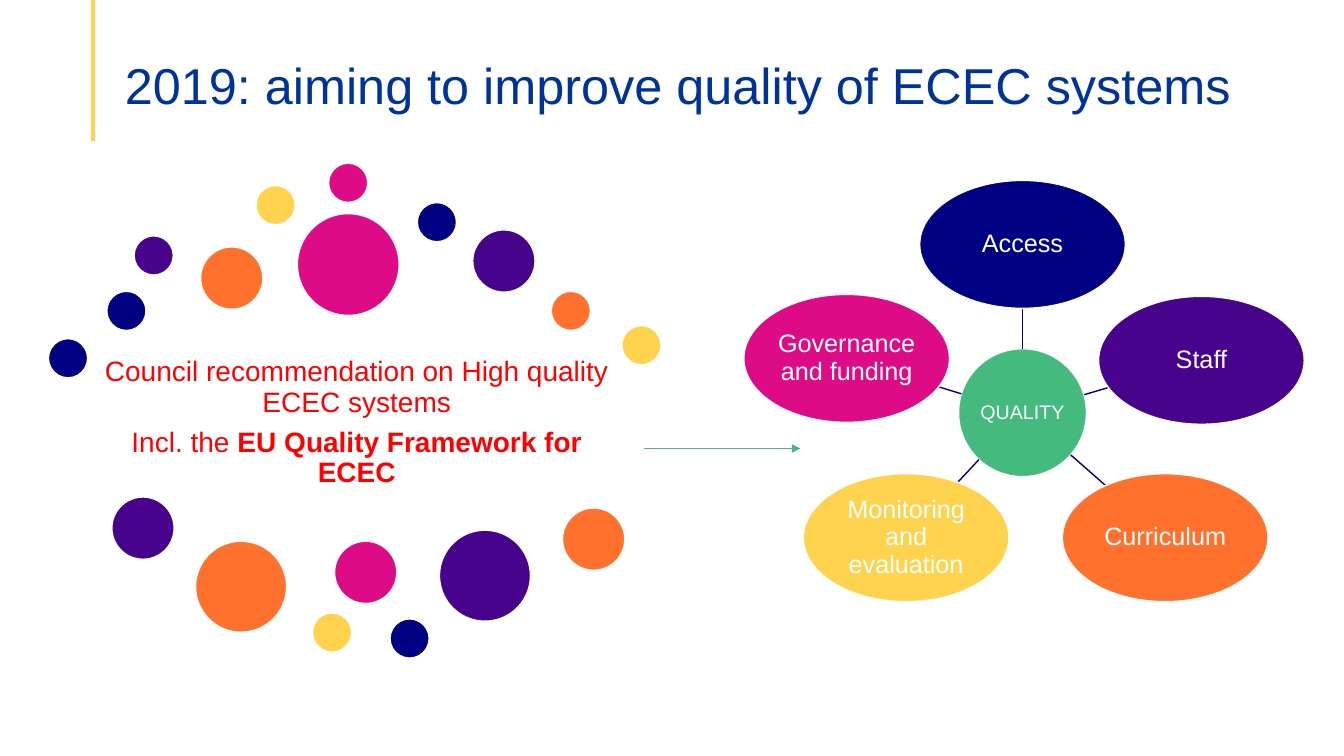
from dataclasses import dataclass
from math import hypot

from lxml import etree
from pptx import Presentation
from pptx.dml.color import RGBColor
from pptx.enum.shapes import MSO_CONNECTOR, MSO_SHAPE
from pptx.enum.text import MSO_ANCHOR, PP_ALIGN
from pptx.oxml.ns import qn
from pptx.shapes.autoshape import Shape
from pptx.shapes.connector import Connector
from pptx.slide import Slide
from pptx.text.text import TextFrame
from pptx.util import Pt

OVAL = MSO_SHAPE.OVAL
STRAIGHT = MSO_CONNECTOR.STRAIGHT
CENTER = PP_ALIGN.CENTER
LEFT = PP_ALIGN.LEFT
MIDDLE = MSO_ANCHOR.MIDDLE
BOTTOM = MSO_ANCHOR.BOTTOM


@dataclass(frozen=True)
class Theme:
    font: str = "Arial"
    white: str = "FFFFFF"
    title: str = "003399"
    message: str = "FF0000"
    navy: str = "000083"
    purple: str = "48038C"
    orange: str = "FF712C"
    yellow: str = "FFD34E"
    pink: str = "DD0C86"
    green: str = "44BA7E"
    title_size: float = 36
    message_size: float = 20
    topic_size: float = 18
    hub_size: float = 14
    line_spacing: float = 0.9
    paragraph_gap: float = 7


@dataclass(frozen=True)
class Phrase:
    text: str
    bold: bool = False


@dataclass(frozen=True)
class Style:
    size: float
    color: str
    align: PP_ALIGN = CENTER
    anchor: MSO_ANCHOR = MIDDLE
    insets: tuple[float, float, float, float] = (0.7, 0.7, 0.7, 0.7)


@dataclass(frozen=True)
class Dot:
    left: float
    top: float
    diameter: float
    color: str


@dataclass(frozen=True)
class Bubble:
    label: str
    x: float
    y: float
    width: float
    color: str
    size: float


THEME = Theme()
SMALL, MEDIUM, LARGE, LARGEST = 28, 44.5, 65, 72.7
BUBBLE_HEIGHT = 91.4
TOPIC_WIDTH = 146.9

DOTS = [
    Dot(76.3, 208.1, SMALL, THEME.navy),
    Dot(95.8, 168.5, SMALL, THEME.purple),
    Dot(143.3, 176.4, MEDIUM, THEME.orange),
    Dot(182.9, 132.5, SMALL, THEME.yellow),
    Dot(234.7, 116.6, SMALL, THEME.pink),
    Dot(298.1, 144.7, SMALL, THEME.navy),
    Dot(337.7, 164.2, MEDIUM, THEME.purple),
    Dot(393.8, 208.1, SMALL, THEME.orange),
    Dot(444.2, 232.6, SMALL, THEME.yellow),
    Dot(212.4, 152.6, LARGEST, THEME.pink),
    Dot(34.6, 241.9, SMALL, THEME.navy),
    Dot(79.9, 355, MEDIUM, THEME.purple),
    Dot(139.7, 386.6, LARGE, THEME.orange),
    Dot(223.2, 437.8, SMALL, THEME.yellow),
    Dot(239, 386.6, MEDIUM, THEME.pink),
    Dot(278.6, 442.1, SMALL, THEME.navy),
    Dot(313.9, 378.7, LARGE, THEME.purple),
    Dot(401.8, 362.9, MEDIUM, THEME.orange),
]

HUB = Bubble("QUALITY", 730.4, 294.8, BUBBLE_HEIGHT, THEME.green, THEME.hub_size)
TOPICS = [
    Bubble(label, x, y, TOPIC_WIDTH, color, THEME.topic_size)
    for label, x, y, color in [
        ("Access", 730.4, 174.6, THEME.navy),
        ("Staff", 858.2, 257.4, THEME.purple),
        ("Curriculum", 832.3, 384.1, THEME.orange),
        ("Monitoring and evaluation", 647.3, 384.1, THEME.yellow),
        ("Governance and funding", 604.8, 256, THEME.pink),
    ]
]

TITLE = [[Phrase("2019: aiming to improve quality of ECEC systems")]]
MESSAGE = [
    [Phrase("Council recommendation on High quality ECEC systems")],
    [Phrase("Incl. the "), Phrase("EU Quality Framework for ECEC", True)],
]


def write(frame: TextFrame, paragraphs: list[list[Phrase]], style: Style) -> None:
    frame.word_wrap = True
    frame.vertical_anchor = style.anchor
    (frame.margin_left, frame.margin_top,
     frame.margin_right, frame.margin_bottom) = map(Pt, style.insets)
    for index, phrases in enumerate(paragraphs):
        paragraph = frame.add_paragraph() if index else frame.paragraphs[0]
        paragraph.alignment = style.align
        paragraph.line_spacing = THEME.line_spacing
        if index < len(paragraphs) - 1:
            paragraph.space_after = Pt(THEME.paragraph_gap)
        for phrase in phrases:
            run = paragraph.add_run()
            run.text = phrase.text
            run.font.name = THEME.font
            run.font.size = Pt(style.size)
            run.font.bold = phrase.bold
            run.font.color.rgb = RGBColor.from_string(style.color)


def add_text(slide: Slide, box: tuple[float, float, float, float],
             paragraphs: list[list[Phrase]], style: Style) -> None:
    write(slide.shapes.add_textbox(*map(Pt, box)).text_frame, paragraphs, style)


def add_oval(slide: Slide, left: float, top: float, width: float,
             height: float, color: str) -> Shape:
    oval = slide.shapes.add_shape(OVAL, Pt(left), Pt(top), Pt(width), Pt(height))
    oval.shadow.inherit = False
    oval.fill.solid()
    oval.fill.fore_color.rgb = RGBColor.from_string(color)
    oval.line.color.rgb = RGBColor.from_string(THEME.white)
    oval.line.width = Pt(1)
    return oval


def add_line(slide: Slide, start: tuple[float, float], end: tuple[float, float],
             color: str, width: float) -> Connector:
    line = slide.shapes.add_connector(STRAIGHT, *map(Pt, (*start, *end)))
    line.line.color.rgb = RGBColor.from_string(color)
    line.line.width = Pt(width)
    etree.SubElement(line._element.spPr, qn("a:effectLst"))
    return line


def add_bubble(slide: Slide, bubble: Bubble) -> None:
    oval = add_oval(slide, bubble.x - bubble.width / 2, bubble.y - BUBBLE_HEIGHT / 2,
                    bubble.width, BUBBLE_HEIGHT, bubble.color)
    write(oval.text_frame, [[Phrase(bubble.label)]], Style(bubble.size, THEME.white))


def edge_toward(bubble: Bubble, target: Bubble) -> tuple[float, float]:
    dx, dy = target.x - bubble.x, target.y - bubble.y
    reach = hypot(dx / (bubble.width / 2), dy / (BUBBLE_HEIGHT / 2))
    return bubble.x + dx / reach, bubble.y + dy / reach


def main() -> None:
    deck = Presentation()
    deck.slide_width, deck.slide_height = Pt(960), Pt(540)
    slide = deck.slides.add_slide(deck.slide_layouts[6])

    add_line(slide, (66.4, 0), (66.4, 100.8), THEME.yellow, 2.25)
    add_text(slide, (82.1, 27.4, 877.7, 54.7), TITLE,
             Style(THEME.title_size, THEME.title, LEFT, BOTTOM, (7.2, 3.6, 7.2, 0)))
    add_text(slide, (66.2, 243.4, 377.3, 117.4), MESSAGE,
             Style(THEME.message_size, THEME.message, insets=(2, 2, 2, 2)))

    for dot in DOTS:
        add_oval(slide, dot.left, dot.top, dot.diameter, dot.diameter, dot.color)

    add_bubble(slide, HUB)
    for topic in TOPICS:
        add_line(slide, edge_toward(HUB, topic), edge_toward(topic, HUB), THEME.navy, 1)
        add_bubble(slide, topic)

    arrow = add_line(slide, (460.1, 320.4), (571.7, 320.4), THEME.green, 0.5)
    etree.SubElement(arrow.line._get_or_add_ln(), qn("a:tailEnd"), type="triangle")

    deck.save("out.pptx")


if __name__ == "__main__":
    main()
